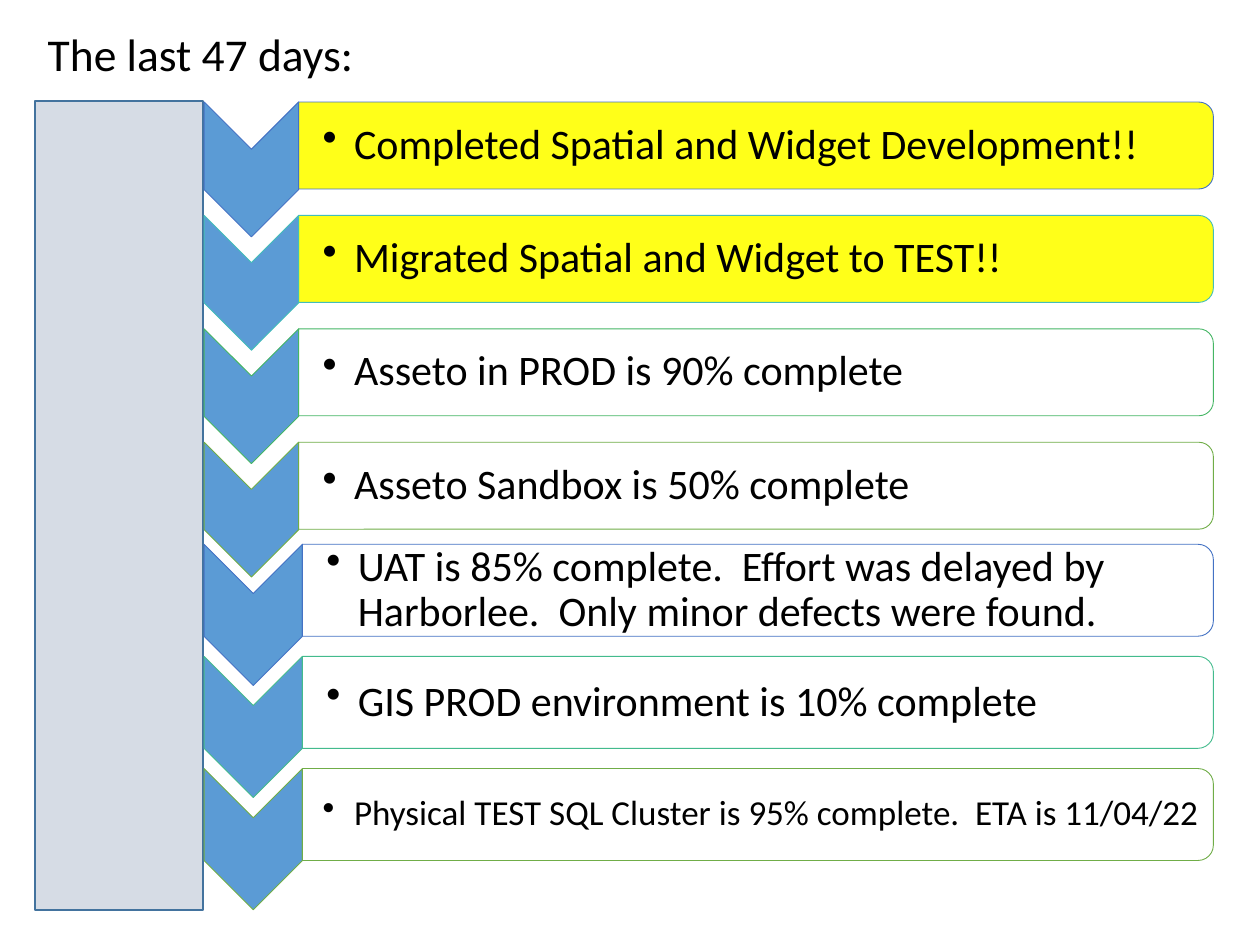
"""Build a status slide with a column of chevrons and milestone bars."""
from dataclasses import dataclass

from lxml.etree import SubElement
from pptx import Presentation
from pptx.dml.color import RGBColor
from pptx.enum.shapes import MSO_SHAPE
from pptx.enum.text import MSO_ANCHOR
from pptx.oxml.ns import qn
from pptx.util import Inches, Pt

COLORS = {
    "black": "000000", "white": "FFFFFF", "yellow": "FFFF00",
    "panel": "D6DCE5", "panel_line": "43739E", "chevron": "5B9BD5",
    "blue": "4472C4", "cyan": "43BEB9", "mint": "45B664",
    "teal": "43BB8D", "green": "70AD47",
}
COLUMN_LEFT, BAR_RIGHT = 1.62, 9.63


@dataclass(frozen=True)
class Milestone:
    text: str
    line: str
    fill: str = "white"
    size: int = 24
    inset: float = 0.19
    margin: float = 0.02


@dataclass(frozen=True)
class Stack:
    top: float
    pitch: float
    chevron_length: float
    chevron_width: float
    bar_height: float
    text_height: float
    milestones: tuple[Milestone, ...]


STACKS = (
    Stack(0.81, 0.9, 1.07, 0.75, 0.69, 0.63, (
        Milestone("Completed Spatial and Widget Development!!", "blue", "yellow"),
        Milestone("Migrated Spatial and Widget to TEST!!", "cyan", "yellow"),
        Milestone("Asseto in PROD is 90% complete", "mint"),
        Milestone("Asseto Sandbox is 50% complete", "green"),
    )),
    Stack(4.32, 0.89, 1.12, 0.78, 0.73, 0.66, (
        Milestone("UAT is 85% complete.  Effort was delayed by Harborlee.  "
                  "Only minor defects were found.", "blue"),
        Milestone("GIS PROD environment is 10% complete", "teal"),
        Milestone("Physical TEST SQL Cluster is 95% complete.  ETA is 11/04/22",
                  "green", size=20, inset=0.16, margin=0.01),
    )),
)


def color(name: str) -> RGBColor:
    """Look up a named colour."""
    return RGBColor.from_string(COLORS[name])


def add_block(page, kind, left: float, top: float, width: float, height: float,
              *, fill: str, line: str, weight: float = 0.5):
    """Add a filled and outlined preset shape."""
    block = page.shapes.add_shape(
        kind, Inches(left), Inches(top), Inches(width), Inches(height))
    block.shadow.inherit = False
    block.fill.solid()
    block.fill.fore_color.rgb = color(fill)
    block.line.color.rgb = color(line)
    block.line.width = Pt(weight)
    return block


def add_turned(page, kind, left: float, top: float, width: float, height: float,
               **style):
    """Add a shape turned a quarter that covers the given area."""
    block = add_block(page, kind, left + (width - height) / 2,
                      top + (height - width) / 2, height, width, **style)
    block.rotation = 90
    return block


def add_text(page, text: str, *, left: float, top: float, width: float,
             height: float, size: int, inset: float = 0.1, margin: float = 0.05,
             right: float = 0.1, anchor=MSO_ANCHOR.TOP, bullet: bool = False):
    """Add a wrapped text box, with a hanging bullet if wanted."""
    box = page.shapes.add_textbox(
        Inches(left), Inches(top), Inches(width), Inches(height))
    frame = box.text_frame
    frame.word_wrap = True
    frame.vertical_anchor = anchor
    frame.margin_left, frame.margin_right = Inches(inset), Inches(right)
    frame.margin_top = frame.margin_bottom = Inches(margin)
    para = frame.paragraphs[0]
    span = para.add_run()
    span.text = text
    span.font.name = "Calibri"
    span.font.size = Pt(size)
    span.font.color.rgb = color("black")
    if bullet:
        para.level = 1
        para.line_spacing = 0.9
        properties = para._p.get_or_add_pPr()
        properties.set("marL", str(Inches(0.25)))
        properties.set("indent", str(Inches(-0.25)))
        SubElement(properties, qn("a:buChar")).set("char", "•")
    return box


def add_milestone(page, stack: Stack, milestone: Milestone, top: float) -> None:
    """Draw the chevron, bar and text of one milestone."""
    bar_left = COLUMN_LEFT + stack.chevron_width
    bar_width = BAR_RIGHT - bar_left
    add_turned(page, MSO_SHAPE.CHEVRON, COLUMN_LEFT, top, stack.chevron_width,
               stack.chevron_length, fill="chevron", line=milestone.line)
    bar = add_turned(page, MSO_SHAPE.ROUND_2_SAME_RECTANGLE, bar_left, top,
                     bar_width, stack.bar_height,
                     fill=milestone.fill, line=milestone.line)
    shade = bar._element.spPr.find(qn("a:solidFill"))[0]
    SubElement(shade, qn("a:alpha")).set("val", "90000")
    add_text(page, milestone.text, left=bar_left,
             top=top + (stack.bar_height - stack.text_height) / 2,
             width=bar_width - 0.04, height=stack.text_height,
             size=milestone.size, inset=milestone.inset, margin=milestone.margin,
             right=milestone.margin, anchor=MSO_ANCHOR.MIDDLE, bullet=True)


def main() -> None:
    """Build and save the deck."""
    deck = Presentation()
    deck.slide_width, deck.slide_height = Inches(10), Inches(7.5)
    page = deck.slides.add_slide(deck.slide_layouts[6])
    add_block(page, MSO_SHAPE.RECTANGLE, 0.28, 0.8, 1.33, 6.42,
              fill="panel", line="panel_line", weight=1)
    add_text(page, "The last 47 days:", left=0.28, top=0.16, width=9.35,
             height=0.54, size=26)
    for stack in STACKS:
        for index, milestone in enumerate(stack.milestones):
            add_milestone(page, stack, milestone, stack.top + index * stack.pitch)
    deck.save("out.pptx")


if __name__ == "__main__":
    main()
